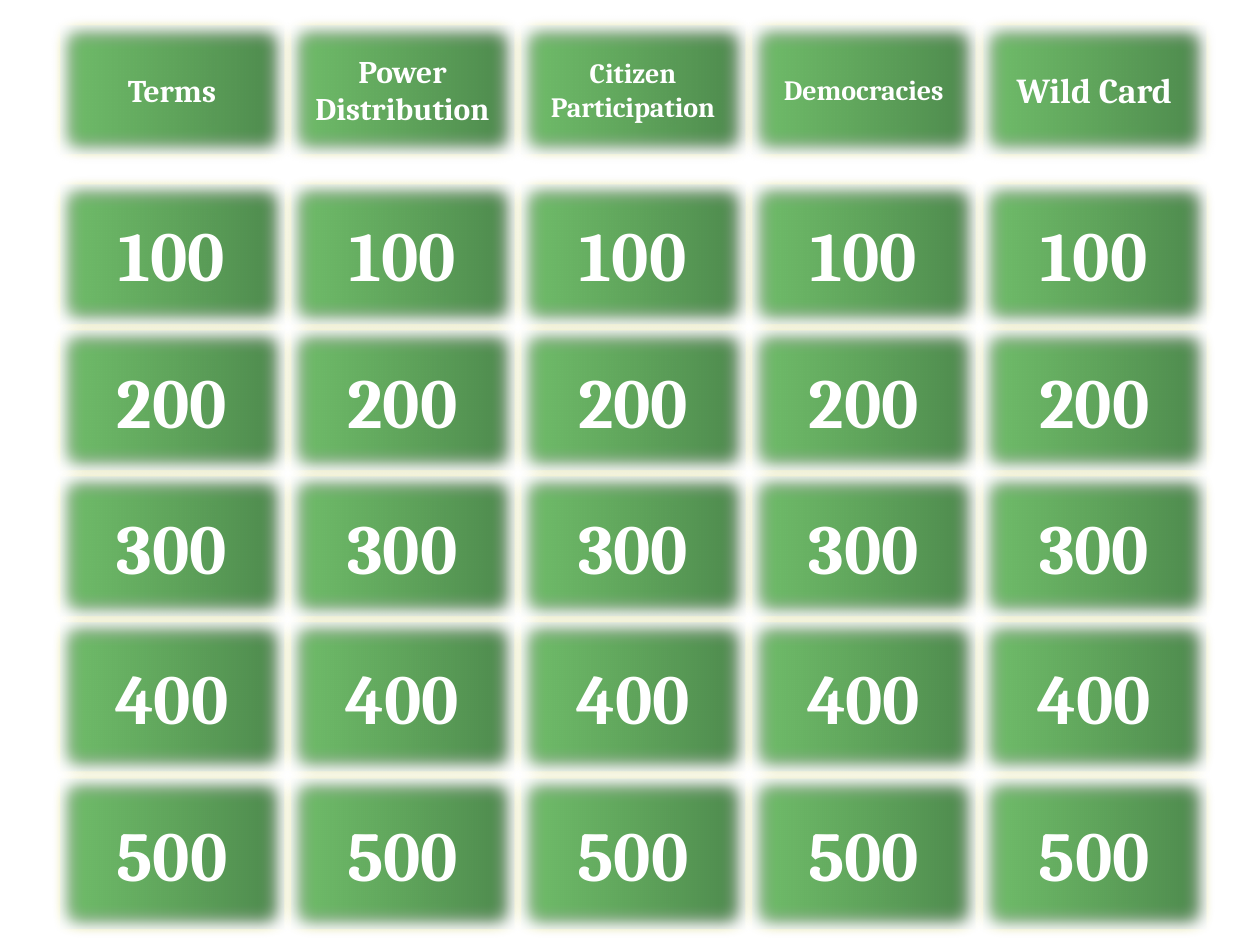
"""Build a quiz board of five topics with cards worth 100 to 500 points."""
import copy
from dataclasses import dataclass

import pptx
import pptx.dml.color
import pptx.enum.shapes
import pptx.enum.text
import pptx.oxml
import pptx.oxml.ns
import pptx.util
from pptx.util import Inches


@dataclass(frozen=True)
class Theme:
    font: str = "Cambria"
    text: str = "FFFFFF"
    border: str = "FFFF00"
    shadow: str = "000000"
    greens: tuple = ((0, "72C06C"), (0.5, "60A65C"), (1, "4D884D"))
    small: int = 16
    medium: int = 18
    large: int = 20
    points: int = 40


theme = Theme()
rgb = pptx.dml.color.RGBColor.from_string


def add_effects(card):
    card.shadow.inherit = False
    effects = card._element.spPr.find(pptx.oxml.ns.qn("a:effectLst"))
    namespace = pptx.oxml.ns.nsdecls("a")
    effects.append(pptx.oxml.parse_xml(
        f'<a:outerShdw {namespace} blurRad="{pptx.util.Pt(5)}" dist="0" dir="0">'
        f'<a:srgbClr val="{theme.shadow}"><a:alpha val="40000"/></a:srgbClr>'
        '</a:outerShdw>'))
    effects.append(pptx.oxml.parse_xml(
        f'<a:softEdge {namespace} rad="{pptx.util.Pt(10)}"/>'))


def add_card(slide, column, top, height, label, size, wrap):
    card = slide.shapes.add_shape(
        pptx.enum.shapes.MSO_SHAPE.ACTION_BUTTON_CUSTOM,
        Inches(0.45 + 1.83 * column), Inches(top), Inches(1.83), Inches(height))
    card.fill.gradient()
    card.fill.gradient_angle = 0
    stops = card._element.spPr.find(".//" + pptx.oxml.ns.qn("a:gsLst"))
    stops.append(copy.deepcopy(stops[0]))
    for stop, (position, green) in zip(card.fill.gradient_stops, theme.greens):
        stop.position = position
        stop.color.rgb = rgb(green)
    card.line.color.rgb = rgb(theme.border)
    card.line.width = pptx.util.Pt(4.5)
    add_effects(card)

    frame = card.text_frame
    frame.word_wrap = wrap
    frame.vertical_anchor = pptx.enum.text.MSO_ANCHOR.MIDDLE
    paragraph = frame.paragraphs[0]
    paragraph.text = label
    paragraph.alignment = pptx.enum.text.PP_ALIGN.CENTER
    paragraph.font.name = theme.font
    paragraph.font.size = pptx.util.Pt(size)
    paragraph.font.bold = True
    paragraph.font.color.rgb = rgb(theme.text)


deck = pptx.Presentation()
deck.slide_width = Inches(10)
deck.slide_height = Inches(7.5)
board = deck.slides.add_slide(deck.slide_layouts[6])

topics = [
    ("Terms", theme.medium, True),
    ("Power Distribution", theme.medium, True),
    ("Citizen Participation", theme.small, True),
    ("Democracies", theme.small, True),
    ("Wild Card", theme.large, False),
]
for column, (topic, size, wrap) in enumerate(topics):
    add_card(board, column, 0.17, 1.08, topic, size, wrap)

point_rows = [
    ("100", 1.43, 1.17),
    ("200", 2.59, 1.17),
    ("300", 3.75, 1.17),
    ("400", 4.91, 1.24),
    ("500", 6.15, 1.25),
]
for points, top, height in point_rows:
    for column in range(len(topics)):
        add_card(board, column, top, height, points, theme.points, False)

deck.save("out.pptx")
